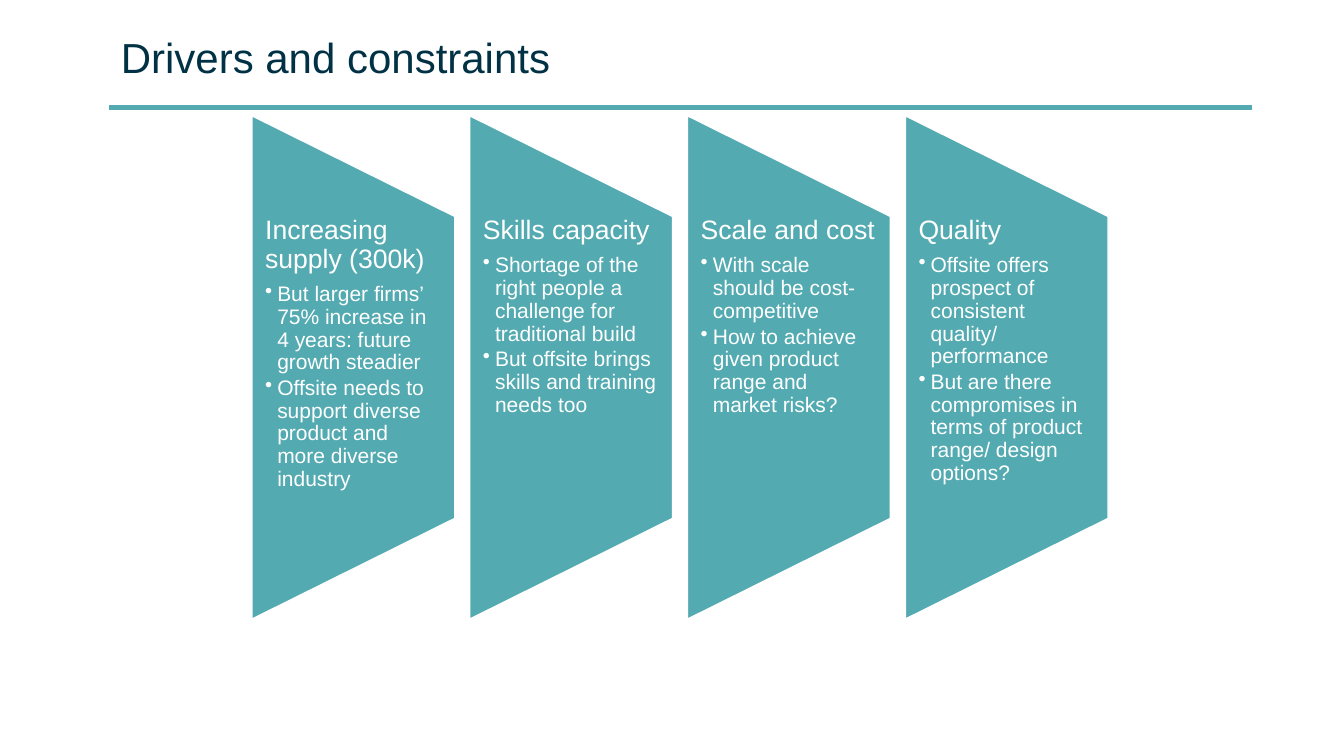
from lxml import etree
from pptx import Presentation
from pptx.dml.color import RGBColor
from pptx.enum.shapes import MSO_CONNECTOR, MSO_SHAPE
from pptx.enum.text import MSO_ANCHOR
from pptx.oxml.ns import qn
from pptx.util import Inches, Pt

TITLE = "Drivers and constraints"
PANELS = [
    ("Increasing supply (300k)", [
        "But larger firms’ 75% increase in 4 years: future growth steadier",
        "Offsite needs to support diverse product and more diverse industry",
    ]),
    ("Skills capacity", [
        "Shortage of the right people a challenge for traditional build",
        "But offsite brings skills and training needs too",
    ]),
    ("Scale and cost", [
        "With scale should be cost-competitive",
        "How to achieve given product range and market risks?",
    ]),
    ("Quality", [
        "Offsite offers prospect of consistent quality/ performance",
        "But are there compromises in terms of product range/ design options?",
    ]),
]
COLORS = {"teal": "53AAB1", "navy": "003144", "white": "FFFFFF"}
FONT = "Arial"
STRAIGHT = MSO_CONNECTOR.STRAIGHT
TRAPEZOID = MSO_SHAPE.FLOWCHART_MANUAL_OPERATION
MIDDLE = MSO_ANCHOR.MIDDLE
TOP = MSO_ANCHOR.TOP

PANEL_LEFT, PANEL_TOP, PANEL_STEP = 2.5, 1.15, 2.16
PANEL_WIDTH, PANEL_HEIGHT = 2.01, 4.99
TEXT_TOP, TEXT_HEIGHT = 2.15, 2.99
BULLET_INDENT = 0.12


def color(name):
    return RGBColor.from_string(COLORS[name])


def add_text_box(slide, left, top, width, height, anchor):
    box = slide.shapes.add_textbox(Inches(left), Inches(top), Inches(width), Inches(height))
    box.text_frame.word_wrap = True
    box.text_frame.vertical_anchor = anchor
    return box.text_frame


def style(para, size, color_name):
    for span in para.runs:
        span.font.name = FONT
        span.font.size = Pt(size)
        span.font.color.rgb = color(color_name)


def add_bullet(para):
    properties = para._p.get_or_add_pPr()
    properties.set("marL", str(Inches(BULLET_INDENT)))
    properties.set("indent", str(-Inches(BULLET_INDENT)))
    etree.SubElement(properties, qn("a:buChar")).set("char", "•")


def add_rule(slide):
    rule = slide.shapes.add_connector(
        STRAIGHT, Inches(1.08), Inches(1.07), Inches(12.42), Inches(1.07))
    rule.line.color.rgb = color("teal")
    rule.line.width = Pt(3.5)
    etree.SubElement(rule._element.spPr, qn("a:effectLst"))


def add_panel(slide, left, heading, points):
    shape_left = left + (PANEL_WIDTH - PANEL_HEIGHT) / 2
    shape_top = PANEL_TOP + (PANEL_HEIGHT - PANEL_WIDTH) / 2
    panel = slide.shapes.add_shape(
        TRAPEZOID, Inches(shape_left), Inches(shape_top),
        Inches(PANEL_HEIGHT), Inches(PANEL_WIDTH))
    panel.rotation = 270
    panel.shadow.inherit = False
    panel.fill.solid()
    panel.fill.fore_color.rgb = color("teal")
    panel.line.color.rgb = color("white")
    panel.line.width = Pt(0.85)

    frame = add_text_box(slide, left, TEXT_TOP, PANEL_WIDTH, TEXT_HEIGHT, TOP)
    frame.margin_left = frame.margin_right = Inches(0.13)
    frame.margin_top = frame.margin_bottom = 0
    frame.text = "\n".join([heading, *points])
    for index, para in enumerate(frame.paragraphs):
        is_heading = index == 0
        para.line_spacing = 0.9
        para.space_after = Pt(6.65 if is_heading else 2.25)
        if not is_heading:
            para.level = 1
            add_bullet(para)
        style(para, 19 if is_heading else 15, "white")


def main():
    deck = Presentation()
    deck.slide_width, deck.slide_height = Inches(13.33), Inches(7.5)
    slide = deck.slides.add_slide(deck.slide_layouts[6])
    add_rule(slide)
    title = add_text_box(slide, 1.1, 0.07, 11.33, 0.98, MIDDLE)
    title.text = TITLE
    style(title.paragraphs[0], 30, "navy")
    for index, (heading, points) in enumerate(PANELS):
        add_panel(slide, PANEL_LEFT + index * PANEL_STEP, heading, points)
    deck.save("out.pptx")


if __name__ == "__main__":
    main()
